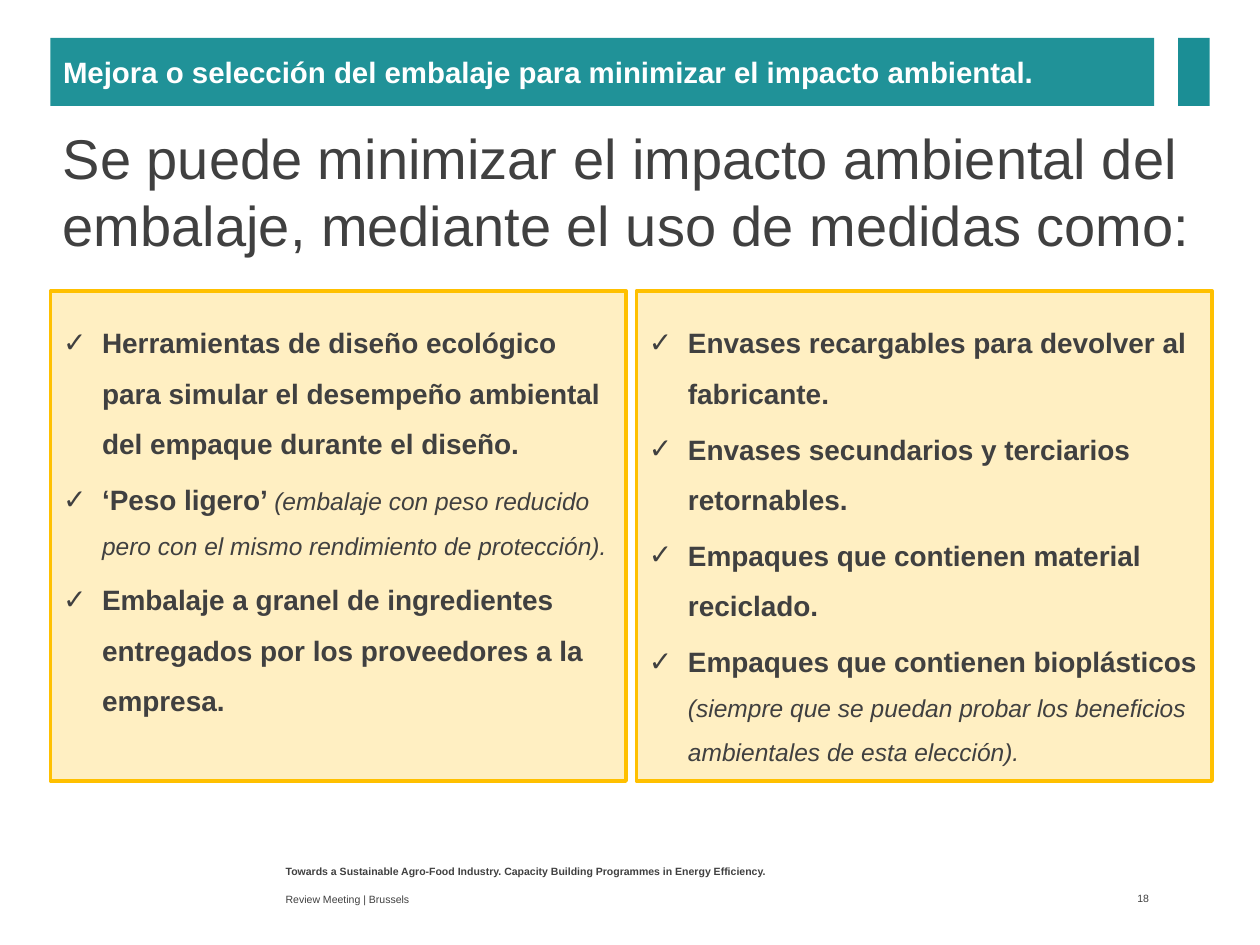
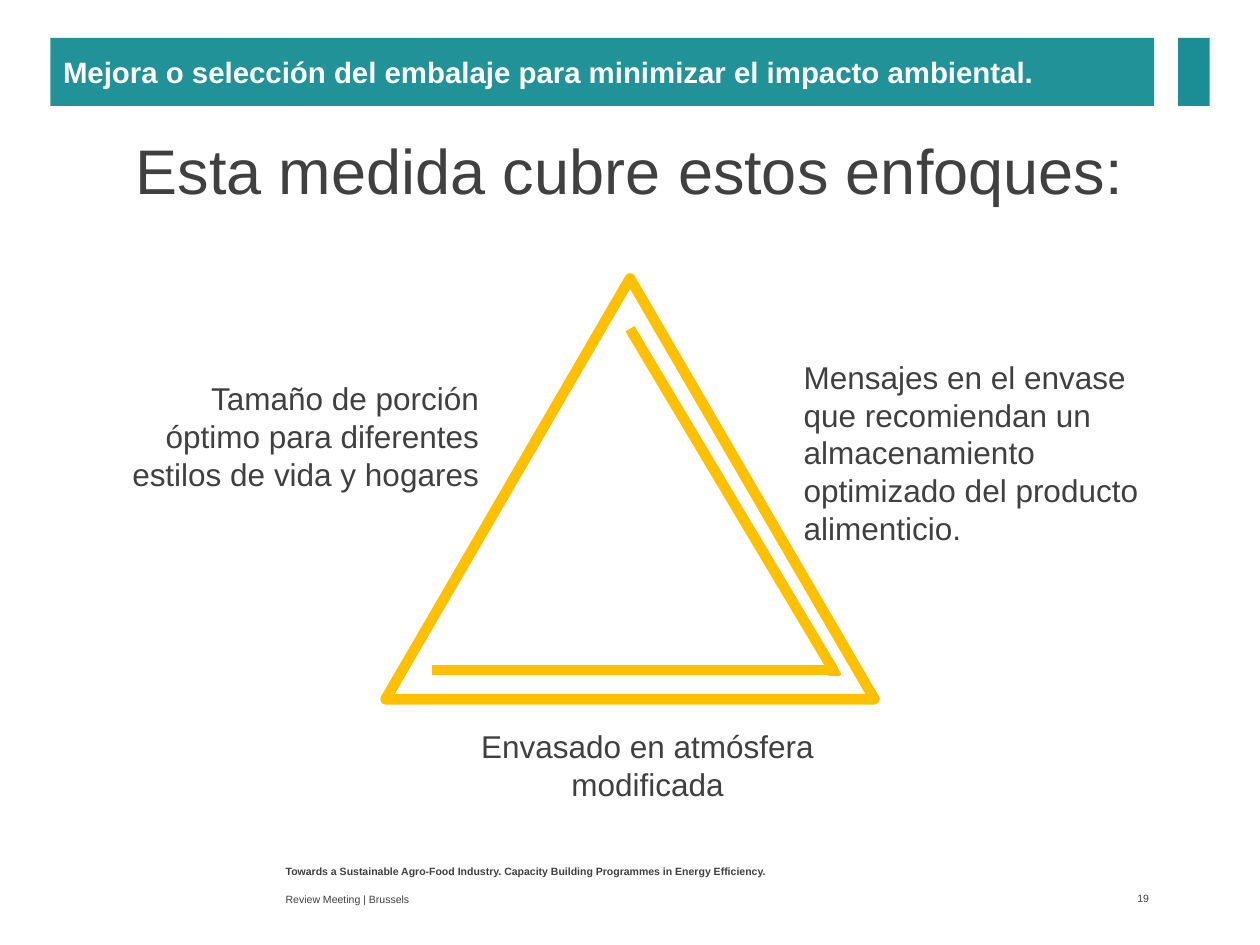
"""Builds two slides on packaging measures that reduce environmental impact."""
from lxml import etree
from pptx import Presentation
from pptx.dml.color import RGBColor
from pptx.enum.shapes import MSO_CONNECTOR, MSO_SHAPE
from pptx.enum.text import MSO_ANCHOR, MSO_AUTO_SIZE, PP_ALIGN
from pptx.oxml.ns import qn
from pptx.util import Pt

LEFT, CENTER, RIGHT = PP_ALIGN.LEFT, PP_ALIGN.CENTER, PP_ALIGN.RIGHT
TOP, MIDDLE = MSO_ANCHOR.TOP, MSO_ANCHOR.MIDDLE
NO_AUTOFIT = MSO_AUTO_SIZE.NONE
RECTANGLE, TRIANGLE = MSO_SHAPE.RECTANGLE, MSO_SHAPE.ISOSCELES_TRIANGLE
STRAIGHT = MSO_CONNECTOR.STRAIGHT
TITLE_ONLY, TWO_CONTENT = 5, 3

COLORS = {"band": "209298", "tab": "1B8E95", "gold": "FFC000",
          "text": "404040", "white": "FFFFFF"}
FONT = "Arial"
MARGIN = 28.8
TITLE = "Mejora o selección del embalaje para minimizar el impacto ambiental."
PROGRAMME = ("Towards a Sustainable Agro-Food Industry. "
             "Capacity Building Programmes in Energy Efficiency.")
MEETING = "Review Meeting | Brussels"

MEASURES = [
    [["Herramientas de diseño ecológico para simular el desempeño ambiental "
      "del empaque durante el diseño."],
     ["‘Peso ligero’ ",
      "(embalaje con peso reducido pero con el mismo rendimiento de protección)."],
     ["Embalaje a granel de ingredientes entregados por los proveedores a la empresa."]],
    [["Envases recargables para devolver al fabricante."],
     ["Envases secundarios y terciarios retornables."],
     ["Empaques que contienen material reciclado."],
     ["Empaques que contienen bioplásticos ",
      "(siempre que se puedan probar los beneficios ambientales de esta elección)."]],
]
APPROACHES = [
    ("Envasado en atmósfera modificada", (260.6, 411.8, 218.9, 72.7), CENTER),
    ("Tamaño de porción óptimo para diferentes estilos de vida y hogares",
     (61.9, 213.1, 218.9, 94.3), RIGHT),
    ("Mensajes en el envase que recomiendan un almacenamiento optimizado "
     "del producto alimenticio.", (452.2, 200.9, 218.9, 138.2), LEFT),
]


class SlideBuilder:
    """Holds the shared style and the slide being built."""

    def __init__(self, deck):
        self.deck = deck
        self.page = None

    def color(self, name):
        return RGBColor.from_string(COLORS[name])

    def start(self, layout, number):
        self.page = self.deck.slides.add_slide(self.deck.slide_layouts[layout])
        band = self.page.shapes.title
        self.place(band, (MARGIN, 21.6, 630.7, 38.9))
        self.paint(band, "band")
        self.fill_text(band, TITLE, 16.8, color="white", bold=True, anchor=MIDDLE)
        self.shape(RECTANGLE, (673.2, 21.6, 18, 38.9), "tab")
        self.text(PROGRAMME, (156.2, 491, 396, 15.1), 6, bold=True)
        self.text(MEETING, (156.2, 506.9, 396, 13.7), 6, anchor=MIDDLE)
        page_number = self.text(str(number), (619.2, 506.2, 40.3, 14.4), 6,
                                align=RIGHT, anchor=MIDDLE)
        page_number.text_frame.margin_right = Pt(2.9)

    def place(self, shape, frame):
        shape.left, shape.top, shape.width, shape.height = map(Pt, frame)

    def paint(self, shape, fill=None, line=None, weight=2, alpha=None):
        if fill:
            shape.fill.solid()
            shape.fill.fore_color.rgb = self.color(fill)
        else:
            shape.fill.background()
        if alpha:
            tint = shape.fill._xPr.find(".//" + qn("a:srgbClr"))
            etree.SubElement(tint, qn("a:alpha"), val=str(alpha * 1000))
        if line:
            shape.line.color.rgb = self.color(line)
            shape.line.width = Pt(weight)
        else:
            shape.line.fill.background()

    def style(self, span, size, color="text", bold=False, italic=False):
        span.font.name = FONT
        span.font.size = Pt(size)
        span.font.bold = bold
        span.font.italic = italic
        span.font.color.rgb = self.color(color)

    def fill_text(self, shape, text, size, color="text", bold=False,
                  align=LEFT, anchor=TOP):
        frame = shape.text_frame
        frame.text = text
        frame.word_wrap = True
        frame.auto_size = NO_AUTOFIT
        frame.vertical_anchor = anchor
        para = frame.paragraphs[0]
        para.alignment = align
        self.style(para.runs[0], size, color, bold)

    def text(self, text, frame, size, **options):
        box = self.page.shapes.add_textbox(*map(Pt, frame))
        self.fill_text(box, text, size, **options)
        return box

    def shape(self, kind, frame, fill=None, line=None, weight=2, parent=None):
        shape = (parent or self.page).shapes.add_shape(kind, *map(Pt, frame))
        shape.shadow.inherit = False
        self.paint(shape, fill, line, weight)

    def line(self, start, end, parent):
        line = parent.shapes.add_connector(STRAIGHT, *map(Pt, start + end))
        line.line.color.rgb = self.color("gold")
        line.line.width = Pt(6)
        etree.SubElement(line._element.spPr, qn("a:effectLst"))

    def checklist(self, panel, frame, items):
        self.place(panel, frame)
        self.paint(panel, "gold", "gold", alpha=24)
        body = panel.text_frame
        body.auto_size = NO_AUTOFIT
        body.vertical_anchor = TOP
        body.margin_top = Pt(10.4)
        for index, parts in enumerate(items):
            para = body.add_paragraph() if index else body.paragraphs[0]
            para.line_spacing = 1.5
            para.space_before = Pt(3.2 if index else 0)
            properties = para._p.get_or_add_pPr()
            properties.set("marL", str(Pt(22.3)))
            properties.set("indent", str(-Pt(22.3)))
            etree.SubElement(properties, qn("a:buFont"), typeface=FONT)
            etree.SubElement(properties, qn("a:buChar"), char="✓")
            for position, part in enumerate(parts):
                span = para.add_run()
                span.text = part
                detail = position > 0
                self.style(span, 14 if detail else 16, bold=not detail, italic=detail)


def build_measures(builder):
    """Lists the measures in two panels."""
    builder.start(TWO_CONTENT, 18)
    builder.text("Se puede minimizar el impacto ambiental del embalaje, "
                 "mediante el uso de medidas como:",
                 (MARGIN, 94.5, 661.7, 28.8), 32, anchor=MIDDLE)
    panels = list(builder.page.placeholders)[1:]
    for column, (panel, items) in enumerate(zip(panels, MEASURES)):
        builder.checklist(panel, (MARGIN + column * 334.8, 166.3, 329, 280), items)


def build_approaches(builder):
    """Draws the triangle with one approach on each side."""
    builder.start(TITLE_ONLY, 19)
    builder.text("Esta medida cubre estos enfoques:",
                 (MARGIN, 82.5, 661.7, 28.8), 36, align=CENTER, anchor=MIDDLE)
    emblem = builder.page.shapes.add_group_shape()
    corner = (476.3, 383)
    builder.shape(TRIANGLE, (220.3, 159.1, 279.4, 240.5), line="gold", weight=6,
                  parent=emblem)
    builder.line((360, 187.9), corner, emblem)
    builder.line((247, 383), corner, emblem)
    builder.shape(TRIANGLE, (473.8, 380.2, 5.8, 5), "gold", "gold", parent=emblem)
    for label, frame, align in APPROACHES:
        builder.text(label, frame, 18, align=align)


def main():
    """Builds and saves the deck."""
    deck = Presentation()
    deck.slide_width, deck.slide_height = Pt(720), Pt(540)
    builder = SlideBuilder(deck)
    build_measures(builder)
    build_approaches(builder)
    deck.save("out.pptx")


if __name__ == "__main__":
    main()
